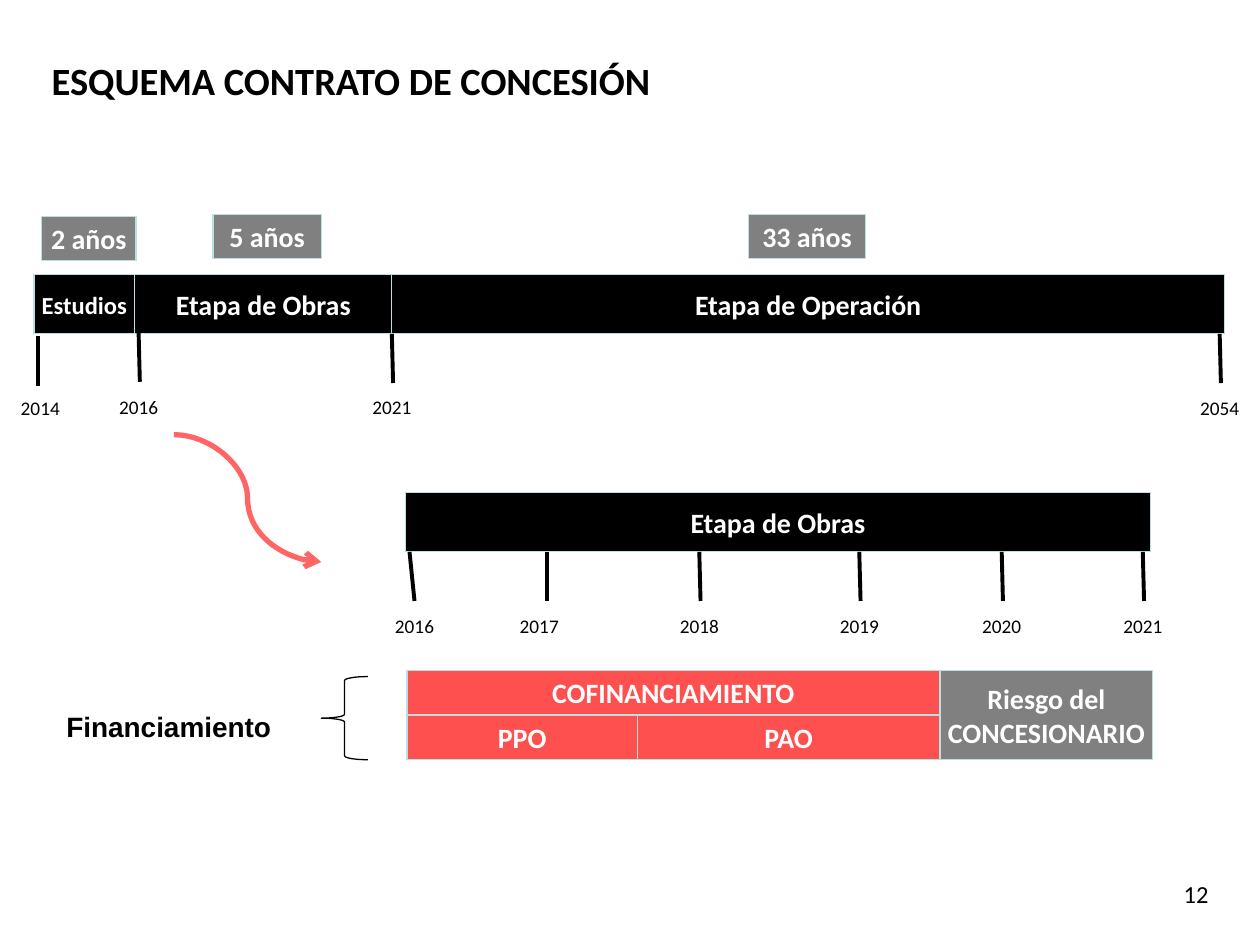
from lxml.etree import SubElement
from pptx import Presentation
from pptx.dml.color import RGBColor
from pptx.enum.shapes import MSO_CONNECTOR as Connector, MSO_SHAPE as Shape
from pptx.enum.text import MSO_ANCHOR as Anchor, PP_ALIGN as Align
from pptx.oxml.ns import qn
from pptx.util import Inches, Pt

BLACK = RGBColor(0x00, 0x00, 0x00)
WHITE = RGBColor(0xFF, 0xFF, 0xFF)
GRAY = RGBColor(0x80, 0x80, 0x80)
RED = RGBColor(0xFF, 0x50, 0x50)
CORAL = RGBColor(0xFF, 0x65, 0x65)
PALE_BLUE = RGBColor(0xBB, 0xE0, 0xE3)

TITLE = "ESQUEMA CONTRATO DE CONCESIÓN"
STAGES = [("Estudios", 0.80, 14), ("Etapa de Obras", 2.04, 16), ("Etapa de Operación", 6.61, 16)]
DURATIONS = [("2 años", 0.33, 1.72, 0.75), ("5 años", 1.69, 1.70, 0.86), ("33 años", 5.94, 1.70, 0.93)]
CONTRACT_YEARS = [
    ("2014", 0.30, 2.67, 0.00, 0.32, 3.12),
    ("2016", 1.10, 2.64, 0.01, 1.10, 3.11),
    ("2021", 3.11, 2.65, 0.01, 3.11, 3.11),
    ("2054", 9.68, 2.65, 0.01, 9.68, 3.12),
]
WORKS_YEARS = [
    ("2016", 3.25, 0.04, 3.29), ("2017", 4.34, 0.00, 4.28), ("2018", 5.55, 0.01, 5.55),
    ("2019", 6.82, 0.01, 6.82), ("2020", 7.95, 0.01, 7.95), ("2021", 9.07, 0.01, 9.07),
]
STAGE_LEFT, STAGE_TOP, BAR_HEIGHT = 0.27, 2.18, 0.47
WORKS_TOP = 3.91
TICK_HEIGHT, SMALL_HEIGHT = 0.39, 0.35
FUND_LEFT, FUND_TOP, FUND_ROW = 3.23, 5.32, 0.355
PPO_WIDTH, PAO_WIDTH, RISK_WIDTH = 1.83, 2.40, 1.69
COFINANCED_WIDTH = PPO_WIDTH + PAO_WIDTH
FUNDING = [
    ("COFINANCIAMIENTO", 0, 0, COFINANCED_WIDTH, 1, RED),
    ("Riesgo del CONCESIONARIO", COFINANCED_WIDTH, 0, RISK_WIDTH, 2, GRAY),
    ("PPO", 0, 1, PPO_WIDTH, 1, RED),
    ("PAO", PPO_WIDTH, 1, PAO_WIDTH, 1, RED),
]


def write(shape, text, size, color=BLACK, bold=False, align=Align.CENTER,
          anchor=Anchor.MIDDLE, font_name="Calibri", tight=True):
    frame = shape.text_frame
    frame.word_wrap = True
    frame.vertical_anchor = anchor
    if tight:
        frame.margin_left = frame.margin_right = Inches(0.04)
        frame.margin_top = frame.margin_bottom = Inches(0.05)
    frame.text = text
    paragraph = frame.paragraphs[0]
    paragraph.alignment = align
    font = paragraph.runs[0].font
    font.name, font.size, font.bold = font_name, Pt(size), bold
    font.color.rgb = color


def add_text(slide, text, left, top, width, height, size, **style):
    box = slide.shapes.add_textbox(Inches(left), Inches(top), Inches(width), Inches(height))
    write(box, text, size, **style)


def add_bar(slide, text, left, top, width, height, fill, size=16):
    bar = slide.shapes.add_shape(
        Shape.RECTANGLE, Inches(left), Inches(top), Inches(width), Inches(height))
    bar.shadow.inherit = False
    bar.fill.solid()
    bar.fill.fore_color.rgb = fill
    bar.line.color.rgb = PALE_BLUE
    bar.line.width = Pt(0.75)
    write(bar, text, size, WHITE, True)


def add_line(slide, kind, start, end, color, width):
    line = slide.shapes.add_connector(kind, *(Inches(value) for value in start + end))
    line.line.color.rgb = color
    line.line.width = Pt(width)
    SubElement(line._element.spPr, qn("a:effectLst"))
    return line


def add_year(slide, year, tick_left, tick_top, slant, center, label_top, label_width):
    add_line(slide, Connector.STRAIGHT, (tick_left, tick_top),
             (tick_left + slant, tick_top + TICK_HEIGHT), BLACK, 2.25)
    add_text(slide, year, center - label_width / 2, label_top, label_width, 0.24, 11)


def add_contract(slide):
    left = STAGE_LEFT
    for text, width, size in STAGES:
        add_bar(slide, text, left, STAGE_TOP, width, BAR_HEIGHT, BLACK, size)
        left += width
    for text, left, top, width in DURATIONS:
        add_bar(slide, text, left, top, width, SMALL_HEIGHT, GRAY)
    for year in CONTRACT_YEARS:
        add_year(slide, *year, 0.55)


def add_works(slide):
    arrow = add_line(slide, Connector.CURVE, (1.38, 3.45), (2.55, 4.46), CORAL, 3)
    SubElement(arrow.line._get_or_add_ln(), qn("a:tailEnd"), type="arrow")
    add_bar(slide, "Etapa de Obras", 3.22, WORKS_TOP, 5.91, BAR_HEIGHT, BLACK)
    tick_top = WORKS_TOP + BAR_HEIGHT
    for year, tick_left, slant, center in WORKS_YEARS:
        add_year(slide, year, tick_left, tick_top, slant, center, tick_top + BAR_HEIGHT, 0.99)


def add_funding(slide):
    add_text(slide, "Financiamiento", 0.24, 5.58, 2.2, 0.37, 16, bold=True,
             anchor=Anchor.TOP, font_name="Arial", tight=False)
    brace = slide.shapes.add_shape(
        Shape.LEFT_BRACE, Inches(2.55), Inches(5.37), Inches(0.37), Inches(0.66))
    brace.shadow.inherit = False
    brace.fill.background()
    brace.line.color.rgb = BLACK
    brace.line.width = Pt(0.75)
    for text, offset, row, width, rows, fill in FUNDING:
        add_bar(slide, text, FUND_LEFT + offset, FUND_TOP + row * FUND_ROW,
                width, rows * FUND_ROW, fill)


def main():
    presentation = Presentation()
    presentation.slide_width, presentation.slide_height = Inches(10), Inches(7.5)
    slide = presentation.slides.add_slide(presentation.slide_layouts[5])
    title = slide.shapes.title
    title.left, title.top, title.width, title.height = (
        Inches(value) for value in (0.31, 0.36, 5.94, 0.55))
    write(title, TITLE, 22, bold=True, align=Align.LEFT, tight=False)
    add_contract(slide)
    add_works(slide)
    add_funding(slide)
    add_text(slide, "12", 7.36, 6.93, 2.33, 0.52, 14, align=Align.RIGHT,
             anchor=Anchor.TOP, tight=False)
    presentation.save("out.pptx")


if __name__ == "__main__":
    main()
